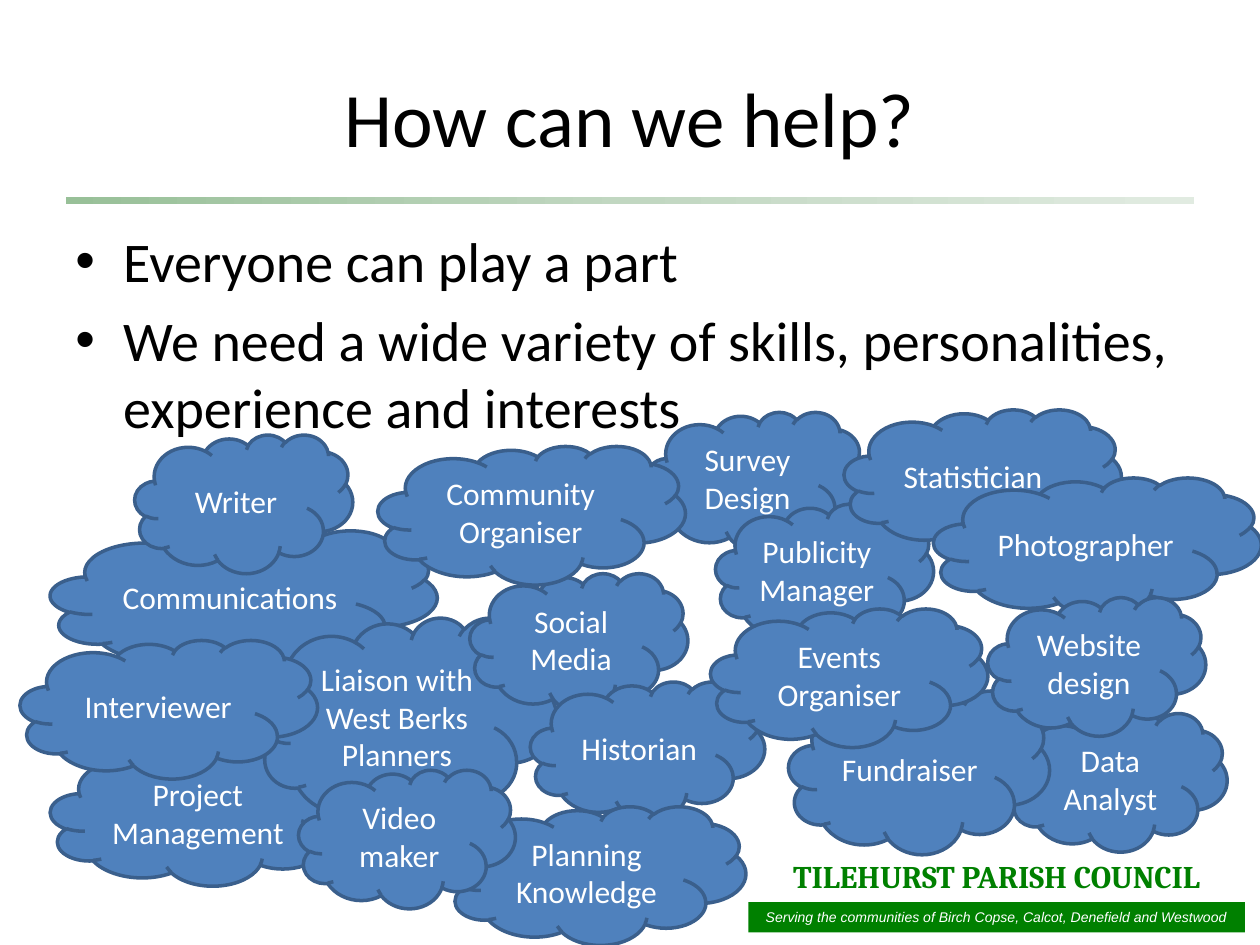
from copy import deepcopy

from lxml.etree import SubElement
from pptx import Presentation
from pptx.dml.color import RGBColor
from pptx.enum.shapes import MSO_SHAPE as Preset
from pptx.enum.text import MSO_ANCHOR as Anchor, PP_ALIGN as Align
from pptx.oxml.ns import qn
from pptx.util import Inches, Pt

COLORS = {
    "text": "000000", "light": "FFFFFF", "green": "008000",
    "cloud": "4F81BD", "outline": "3A5F8C",
    "rule_start": "98C098", "rule_middle": "C1D7C1", "rule_end": "E1EBE1",
}
CELL = 0.1  # inches; the page is a grid of 100 columns by 75 rows
COLUMNS, ROWS = 100, 75
CLOUD_WIDTH, CLOUD_HEIGHT = 17.3, 11

# Label, column, row, then width and height where they differ; back to front
CLOUDS = [
    ("Project Management", 4, 59.3, 25.2),
    ("Survey Design", 51.3, 32.7),
    ("Communications", 4, 42.1, 30.7),
    ("Liaison with West Berks Planners", 20.5, 49, 23.7, 16.5),
    ("Publicity\nManager", 56.8, 40),
    ("Social Media", 37.3, 45.5),
    ("Data Analyst", 80.1, 56.6),
    ("Historian", 42.1, 54.1, 18.6),
    ("Fundraiser", 62.6, 54.8, 20.7, 13),
    ("Interviewer", 1.6, 50.8, 23.6),
    ("Planning Knowledge", 35.6, 64, 23.6),
    ("Statistician", 67, 32.5, 22),
    ("Community Organiser", 30, 35.4, 24.4),
    ("Photographer", 74.1, 37.9, 26),
    ("Writer", 10.7, 34.5),
    ("Video maker", 23.7, 61.1, 17.2),
    ("Website design", 78.4, 47.4),
    ("Events Organiser", 56.4, 48.3, 22),
]


def cells(*counts):
    return [Inches(count * CELL) for count in counts]


def color(name):
    return RGBColor.from_string(COLORS[name])


class Board:
    """Holds the text style and the current page; places are in grid cells."""

    def __init__(self, page, font="Calibri", size=18):
        self.page, self.font, self.size = page, font, size

    def add_spans(self, para, text, ink, size=None, font=None, bold=None, italic=None):
        for number, line in enumerate(text.split("\n")):
            if number:
                para.add_line_break()
            span = para.add_run()
            span.text = line
            span.font.name = font or self.font
            span.font.size = Pt(size or self.size)
            span.font.bold, span.font.italic = bold, italic
            span.font.color.rgb = color(ink)

    def text(self, place, text, ink="text", anchor=Anchor.TOP, **style):
        frame = self.page.shapes.add_textbox(*cells(*place)).text_frame
        self.fill_frame(frame, text, ink, anchor, **style)

    def fill_frame(self, frame, text, ink, anchor, **style):
        frame.word_wrap = True
        frame.vertical_anchor = anchor
        frame.paragraphs[0].alignment = Align.CENTER
        self.add_spans(frame.paragraphs[0], text, ink, **style)

    def shape(self, preset, place, fill=None, line=None):
        shape = self.page.shapes.add_shape(preset, *cells(*place))
        shape.shadow.inherit = False
        if fill:
            shape.fill.solid()
            shape.fill.fore_color.rgb = color(fill)
        if line:
            shape.line.color.rgb = color(line)
            shape.line.width = Pt(2)
        else:
            shape.line.fill.background()
        return shape

    def cloud(self, text, left, top, width=CLOUD_WIDTH, height=CLOUD_HEIGHT):
        place = (left, top, width, height)
        shape = self.shape(Preset.CLOUD, place, "cloud", "outline")
        self.fill_frame(shape.text_frame, text, "light", Anchor.MIDDLE)

    def banner(self, place, text, **style):
        shape = self.shape(Preset.RECTANGLE, place, "green")
        self.fill_frame(shape.text_frame, text, "light", Anchor.MIDDLE, **style)

    def fading_rule(self, place):
        rule = self.shape(Preset.RECTANGLE, place, line="light")
        gradient = rule.fill
        gradient.gradient()
        gradient.gradient_angle = 0
        first, last = gradient.gradient_stops
        for stop, name, position in ((first, "rule_middle", 0.5), (last, "rule_end", 1)):
            stop.color.rgb, stop.position = color(name), position
        stops = rule._element.spPr.find(".//" + qn("a:gsLst"))
        stops.insert(0, deepcopy(stops[0]))
        start = gradient.gradient_stops[0]
        start.color.rgb, start.position = color("rule_start"), 0

    def bullets(self, place, lines, size, indent=0.38):
        frame = self.page.shapes.add_textbox(*cells(*place)).text_frame
        frame.word_wrap = True
        for number, line in enumerate(lines):
            para = frame.add_paragraph() if number else frame.paragraphs[0]
            para.space_before = Pt(size * 0.2)
            props = para._p.get_or_add_pPr()
            props.set("marL", str(Inches(indent)))
            props.set("indent", str(-Inches(indent)))
            SubElement(props, qn("a:buFont")).set("typeface", "Arial")
            SubElement(props, qn("a:buChar")).set("char", "•")
            self.add_spans(para, line, "text", size=size)


def main():
    deck = Presentation()
    deck.slide_width, deck.slide_height = cells(COLUMNS, ROWS)
    board = Board(deck.slides.add_slide(deck.slide_layouts[6]))

    board.text((61, 67.5, 36.2, 4), "TILEHURST PARISH COUNCIL", "green",
               font="Cambria", bold=True)
    board.banner((59.4, 71.6, 39.4, 2.4),
                 "Serving the communities of Birch Copse, Calcot, Denefield and Westwood",
                 size=8, font="Arial", italic=True)
    board.fading_rule((5.1, 15.5, 89.8, 0.8))
    board.text((5, 3, 90, 12.5), "How can we help?", anchor=Anchor.MIDDLE, size=44)
    board.bullets((5, 17.5, 90, 49.5), [
        "Everyone can play a part",
        "We need a wide variety of skills, personalities, experience and interests",
    ], size=32)
    for cloud in CLOUDS:
        board.cloud(*cloud)

    deck.save("out.pptx")


if __name__ == "__main__":
    main()
